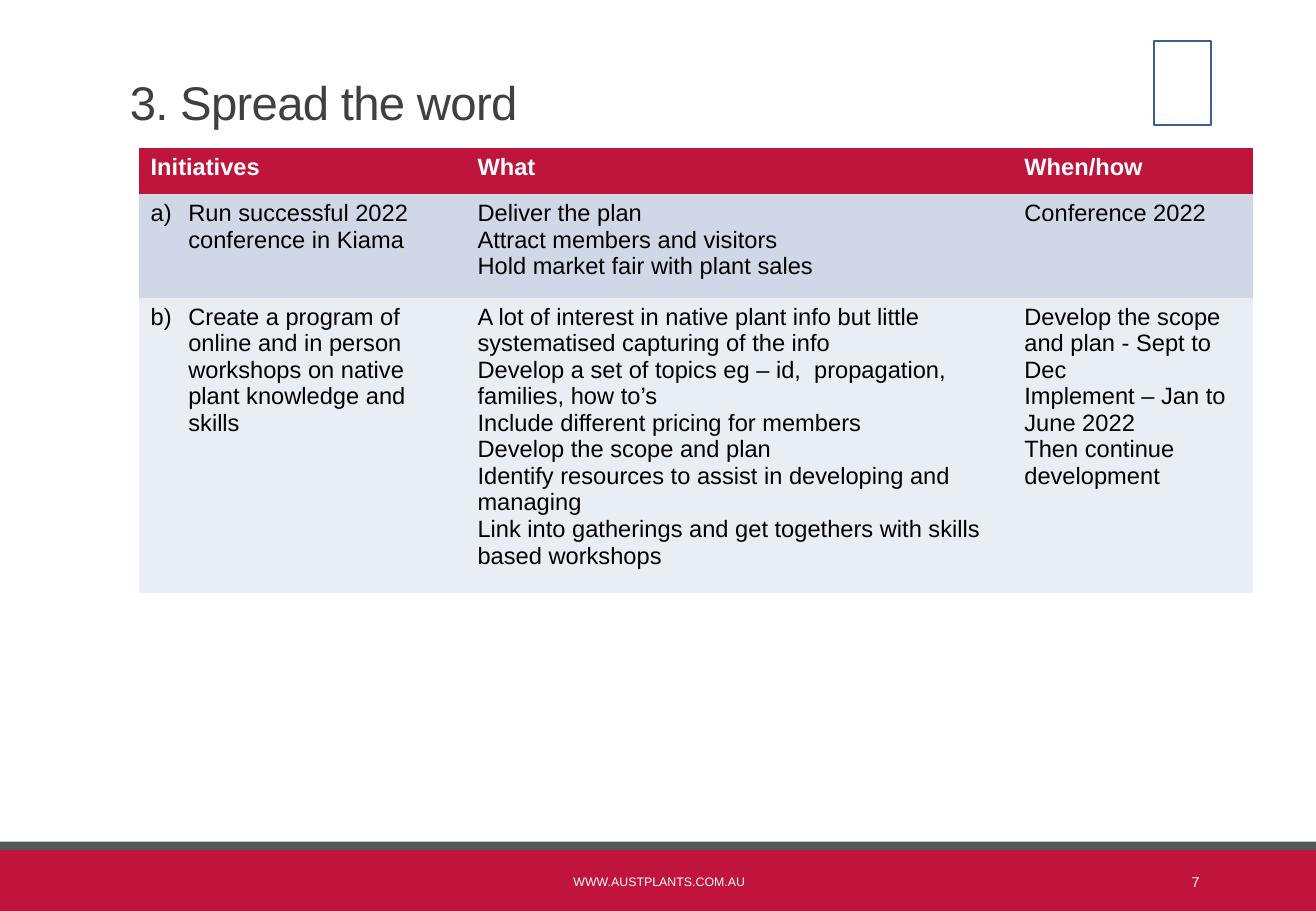
from lxml import etree
from pptx import Presentation, util as u
from pptx.dml.color import RGBColor
from pptx.enum import shapes, text
from pptx.oxml.ns import qn

CRIMSON = RGBColor(0xC0, 0x14, 0x3C)
HEADER_RED = RGBColor(0xBF, 0x14, 0x3B)
SLATE = RGBColor(0x54, 0x58, 0x5B)
CHARCOAL = RGBColor(0x40, 0x40, 0x40)
OUTLINE = RGBColor(0x3A, 0x5F, 0x8C)
WHITE = RGBColor(0xFF, 0xFF, 0xFF)
BLACK = RGBColor(0, 0, 0)
BLUE_BAND = RGBColor(0xD0, 0xD8, 0xE8)
PALE_BAND = RGBColor(0xE9, 0xED, 0xF4)

WIDTH, HEIGHT = 10.83, 7.5
FOOTER_TOP = 7
FOOTER_TEXT_TOP = 7.06
RIGHT_EDGE = 9.97

deck = Presentation()
deck.slide_width, deck.slide_height = u.Inches(WIDTH), u.Inches(HEIGHT)
slide = deck.slides.add_slide(deck.slide_layouts[6])


def write(frame, lines, size=14, color=BLACK, bold=False, align=None,
          anchor=text.MSO_ANCHOR.TOP, leading=None, tracking=None, number=None):
    frame.word_wrap = True
    frame.vertical_anchor = anchor
    for index, line in enumerate(lines):
        paragraph = frame.paragraphs[0] if index == 0 else frame.add_paragraph()
        paragraph.alignment = align
        if leading:
            paragraph.line_spacing = leading
        if number:
            props = paragraph._p.get_or_add_pPr()
            props.set("marL", str(u.Inches(0.31)))
            props.set("indent", str(u.Inches(-0.31)))
            etree.SubElement(props, qn("a:buAutoNum"),
                             type="alphaLcParenR", startAt=str(number))
        run = paragraph.add_run()
        run.text = line
        run.font.name = "Arial"
        run.font.size = u.Pt(size)
        run.font.bold = bold
        run.font.color.rgb = color
        if tracking:
            run.font._element.set("spc", str(round(tracking * 100)))


def place(*box):
    return [u.Inches(length) for length in box]


for top, depth, color in [(FOOTER_TOP, 0.5, CRIMSON), (FOOTER_TOP - 0.07, 0.07, SLATE)]:
    band = slide.shapes.add_shape(shapes.MSO_SHAPE.RECTANGLE, *place(0, top, WIDTH, depth))
    band.shadow.inherit = False
    band.fill.solid()
    band.fill.fore_color.rgb = color
    band.line.fill.background()

title = slide.shapes.add_textbox(*place(0.97, 0.43, 3.77, 0.69))
write(title.text_frame, ["3. Spread the word"], size=28, color=CHARCOAL,
      anchor=text.MSO_ANCHOR.BOTTOM, leading=0.85, tracking=-0.4)

website = slide.shapes.add_textbox(*place(3.28, FOOTER_TEXT_TOP, 4.29, 0.4))
write(website.text_frame, ["WWW.AUSTPLANTS.COM.AU"], size=7.3, color=WHITE,
      align=text.PP_ALIGN.CENTER, anchor=text.MSO_ANCHOR.MIDDLE)

column_widths = [2.69, 4.5, 1.98]
row_heights = [0.38, 0.85, 2.29]
row_fills = [HEADER_RED, BLUE_BAND, PALE_BAND]
initiatives = [
    [["Initiatives"], ["What"], ["When/how"]],
    [
        ["Run successful 2022 conference in Kiama"],
        ["Deliver the plan",
         "Attract members and visitors",
         "Hold market fair with plant sales"],
        ["Conference 2022"],
    ],
    [
        ["Create a program of online and in person workshops on native plant knowledge and skills"],
        ["A lot of interest in native plant info but little systematised capturing of the info",
         "Develop a set of topics eg – id,  propagation, families, how to’s",
         "Include different pricing for members",
         "Develop the scope and plan",
         "Identify resources to assist in developing and managing",
         "Link into gatherings and get togethers with skills based workshops"],
        ["Develop the scope and plan - Sept to Dec",
         "Implement – Jan to June 2022",
         "Then continue development"],
    ],
]

plan = slide.shapes.add_table(
    len(row_heights), len(column_widths),
    *place(1.14, 1.22, sum(column_widths), sum(row_heights))).table
plan.horz_banding = False
plan.first_row = False
style_id = plan._tbl.tblPr.find(qn("a:tableStyleId"))
style_id.text = "{2D5ABB26-0587-4C30-8999-92F81FD0307C}"
for column, width in zip(plan.columns, column_widths):
    column.width = u.Inches(width)
for r, contents in enumerate(initiatives):
    plan.rows[r].height = u.Inches(row_heights[r])
    for c, lines in enumerate(contents):
        cell = plan.cell(r, c)
        cell.fill.solid()
        cell.fill.fore_color.rgb = row_fills[r]
        write(cell.text_frame, lines, color=BLACK if r else WHITE, bold=r == 0,
              number=r if c == 0 else None)

page_number = slide.shapes.add_textbox(*place(RIGHT_EDGE - 1.17, FOOTER_TEXT_TOP, 1.17, 0.4))
write(page_number.text_frame, ["7"], size=8.5, color=WHITE,
      align=text.PP_ALIGN.RIGHT, anchor=text.MSO_ANCHOR.MIDDLE)

emblem = slide.shapes.add_shape(shapes.MSO_SHAPE.RECTANGLE,
                                *place(RIGHT_EDGE - 0.47, 0.34, 0.47, 0.69))
emblem.shadow.inherit = False
emblem.fill.background()
emblem.line.color.rgb = OUTLINE
emblem.line.width = u.Pt(1.25)

deck.save("out.pptx")
